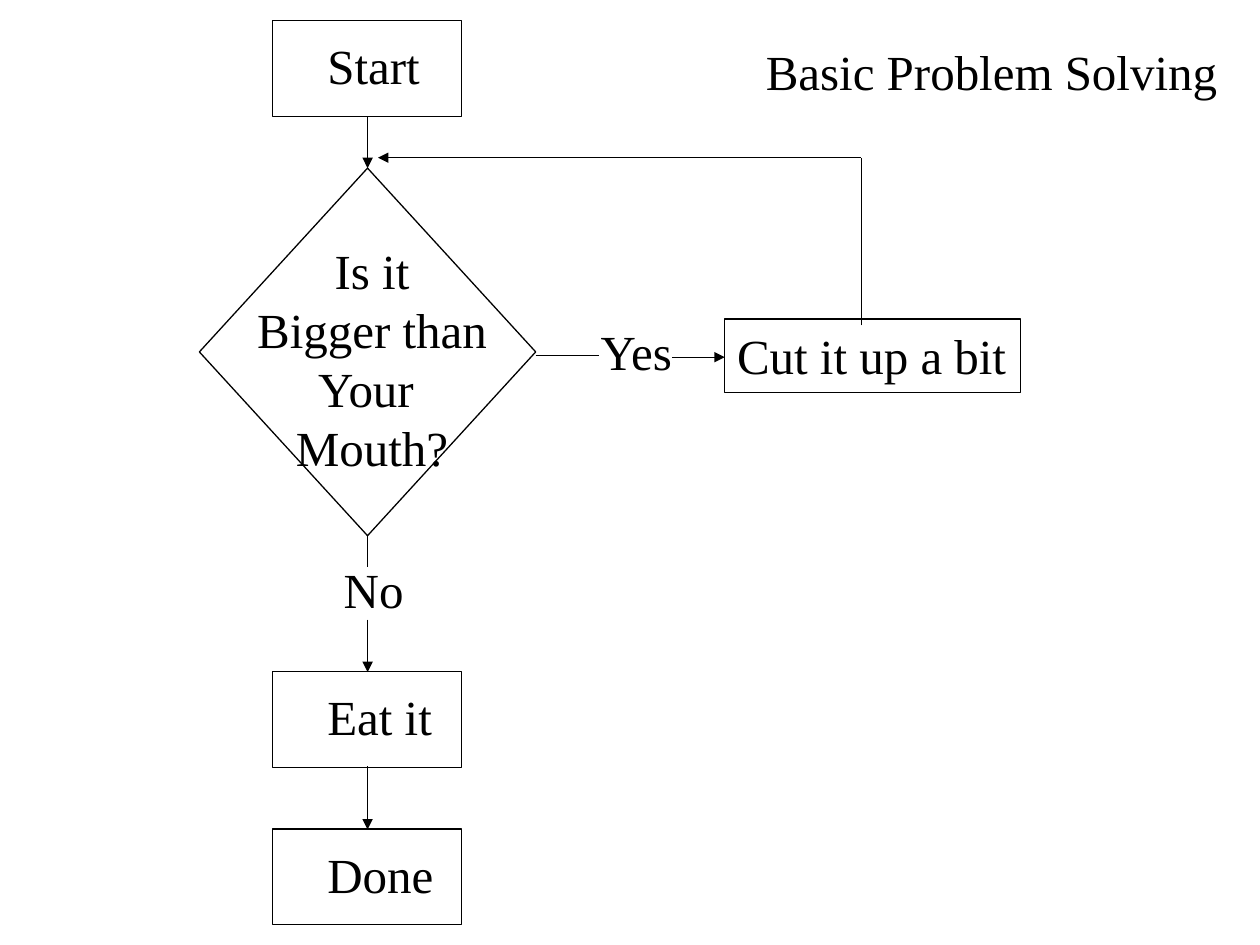
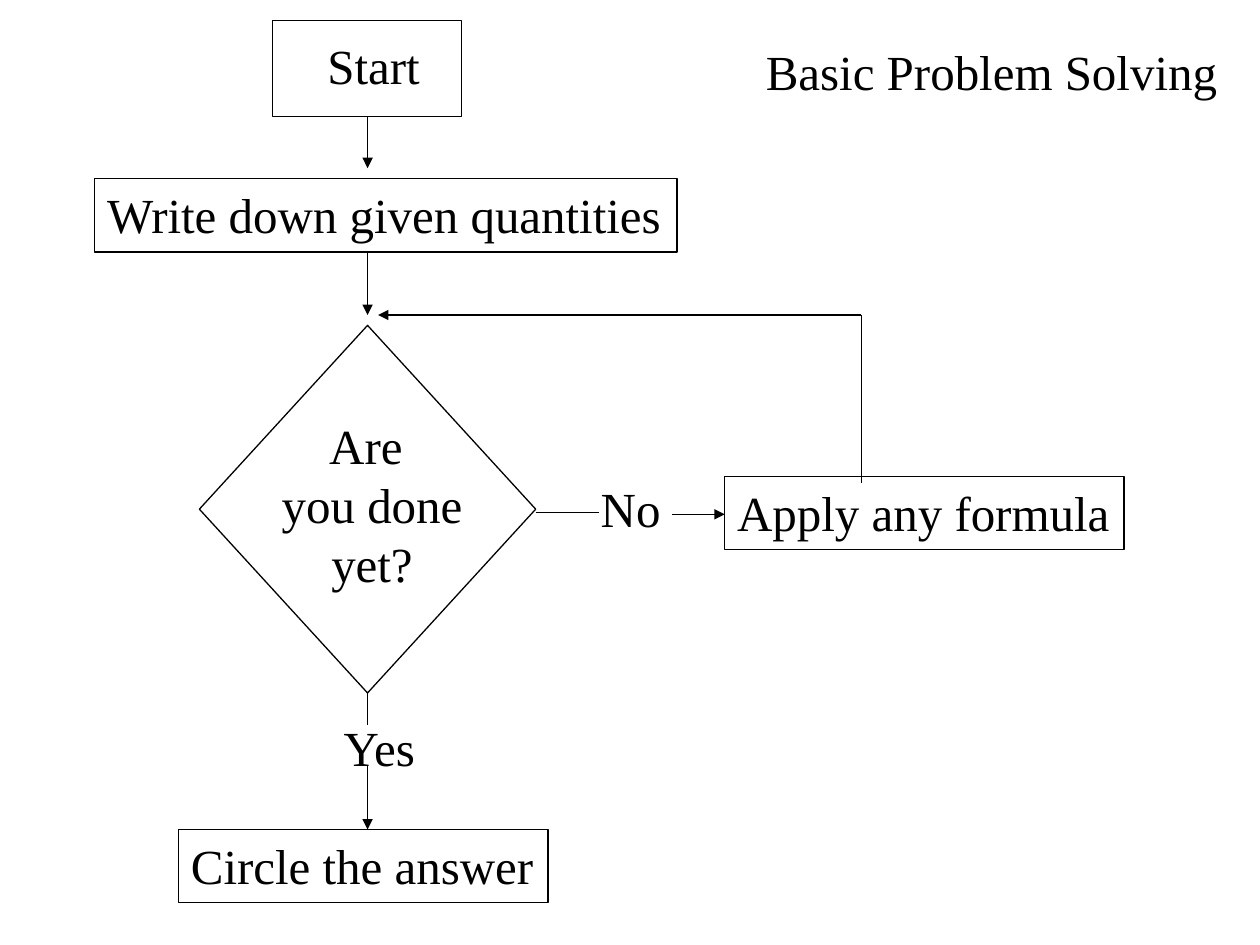
from lxml.etree import SubElement
from pptx import Presentation
from pptx.dml.color import RGBColor
from pptx.enum.shapes import MSO_CONNECTOR, MSO_SHAPE
from pptx.enum.text import MSO_ANCHOR, MSO_AUTO_SIZE, PP_ALIGN
from pptx.oxml.ns import qn
from pptx.util import Cm, Pt

FLOW_X = 7.41
LOOP_X = 17.36
LABEL_WIDTHS = {"Yes": 2.06, "No": 1.73}


def color(value):
    return RGBColor.from_string(value)


class Flowchart:
    """Draws flowchart elements in one style on the current slide."""

    font_name = "Times New Roman"
    font_size = Pt(28)
    ink = "000000"
    line_width = Pt(0.75)
    line_height = 1.19
    step_height = 1.48
    diamond_width, diamond_height = 6.78, 7.41

    def __init__(self):
        self.presentation = Presentation()
        self.presentation.slide_width = Cm(25.4)
        self.presentation.slide_height = Cm(19.05)
        self.slide = None

    def add_slide(self, title):
        self.slide = self.presentation.slides.add_slide(self.presentation.slide_layouts[6])
        self.text(title, 15.19, 0.71, 9.6)

    def set_text(self, shape, lines, alignment):
        frame = shape.text_frame
        frame.word_wrap = False
        frame.auto_size = MSO_AUTO_SIZE.SHAPE_TO_FIT_TEXT
        frame.vertical_anchor = MSO_ANCHOR.TOP
        frame.text = lines
        for paragraph in frame.paragraphs:
            paragraph.alignment = alignment
            paragraph.font.name = self.font_name
            paragraph.font.size = self.font_size
            paragraph.font.color.rgb = color(self.ink)

    def text(self, lines, left, top, width, alignment=PP_ALIGN.LEFT):
        height = self.line_height * len(lines.split("\n")) + 0.25
        shape = self.slide.shapes.add_textbox(Cm(left), Cm(top), Cm(width), Cm(height))
        self.set_text(shape, lines, alignment)

    def outline(self, kind, left, top, width, height):
        shape = self.slide.shapes.add_shape(kind, Cm(left), Cm(top), Cm(width), Cm(height))
        shape.shadow.inherit = False
        shape.fill.background()
        shape.line.color.rgb = color(self.ink)
        shape.line.width = self.line_width
        return shape

    def terminal(self, label, top, text_width):
        self.outline(MSO_SHAPE.RECTANGLE, 5.5, top, 3.81, 1.93)
        self.text(label, 6.35, top + 0.18, text_width)

    def step(self, label, left, top, width):
        shape = self.outline(MSO_SHAPE.RECTANGLE, left, top, width, self.step_height)
        self.set_text(shape, label, PP_ALIGN.LEFT)

    def line(self, start_x, start_y, end_x, end_y, arrow=False):
        connector = self.slide.shapes.add_connector(
            MSO_CONNECTOR.STRAIGHT, Cm(start_x), Cm(start_y), Cm(end_x), Cm(end_y))
        connector.line.color.rgb = color(self.ink)
        connector.line.width = self.line_width
        properties = connector.element.spPr
        if arrow:
            SubElement(properties.find(qn("a:ln")), qn("a:tailEnd"), type="triangle")
        SubElement(properties, qn("a:effectLst"))

    def arrow_down(self, top, bottom):
        self.line(FLOW_X, top, FLOW_X, bottom, arrow=True)

    def decision(self, top, question, question_offset, question_width,
                 loop_answer, exit_answer, action, action_width):
        right = FLOW_X + self.diamond_width / 2
        bottom = top + self.diamond_height
        self.outline(MSO_SHAPE.DIAMOND, FLOW_X - self.diamond_width / 2, top,
                     self.diamond_width, self.diamond_height)
        self.text(question, 7.5 - question_width / 2, top + question_offset,
                  question_width, PP_ALIGN.CENTER)

        self.line(FLOW_X, bottom, FLOW_X, bottom + 0.64)
        self.text(exit_answer, 6.68, bottom + 0.36, LABEL_WIDTHS[exit_answer])

        self.line(right, top + 3.77, 12.07, top + 3.77)
        self.text(loop_answer, 11.86, top + 2.96, LABEL_WIDTHS[loop_answer])
        self.line(13.55, top + 3.81, 14.61, top + 3.81, arrow=True)
        self.step(action, 14.61, top + 3.04, action_width)

        self.line(LOOP_X, top + 3.17, LOOP_X, top - 0.21)
        self.line(LOOP_X, top - 0.21, 7.62, top - 0.21, arrow=True)


def main():
    chart = Flowchart()
    title = "Basic Problem Solving"

    chart.add_slide(title)
    chart.terminal("Start", 0.42, 2.39)
    chart.arrow_down(2.34, 3.39)
    chart.decision(3.39, "Is it\nBigger than\nYour \nMouth?", 1.34, 5.13,
                   "Yes", "No", "Cut it up a bit", 5.97)
    chart.arrow_down(12.49, 13.55)
    chart.terminal("Eat it", 13.54, 2.62)
    chart.arrow_down(15.45, 16.72)
    chart.terminal("Done", 16.71, 2.64)

    chart.add_slide(title)
    chart.terminal("Start", 0.42, 2.39)
    chart.arrow_down(2.34, 3.39)
    chart.step("Write down given quantities", 1.91, 3.6, 11.74)
    chart.arrow_down(5.08, 6.35)
    chart.decision(6.56, "Are \nyou done\nyet?", 1.7, 4.17,
                   "No", "Yes", "Apply any formula", 8.05)
    chart.arrow_down(15.45, 16.72)
    chart.step("Circle the answer", 3.6, 16.72, 7.45)

    chart.presentation.save("out.pptx")


if __name__ == "__main__":
    main()
